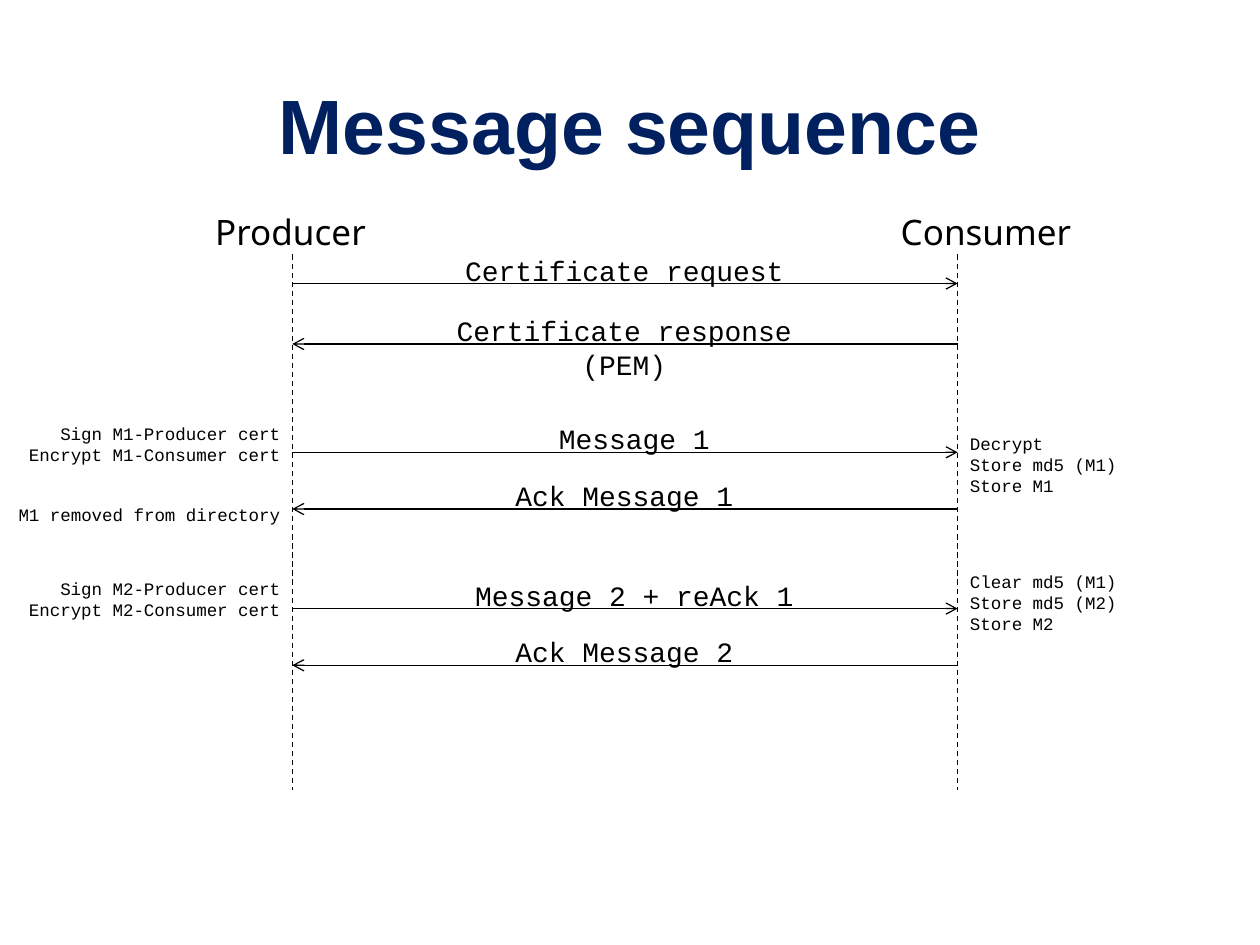
"""Build the message sequence slide between producer and consumer."""
from lxml.etree import SubElement
from pptx import Presentation
from pptx.dml.color import RGBColor
from pptx.enum.dml import MSO_LINE
from pptx.enum.shapes import MSO_CONNECTOR
from pptx.enum.text import MSO_ANCHOR, PP_ALIGN as Align
from pptx.oxml.ns import qn
from pptx.util import Inches, Pt

COLORS = {"title": "002060", "ink": "000000"}
MONO = "Courier New"
LEFT, RIGHT = 2.32, 7.6
TOP, END = 2.02, 6.27

ROLES = [("Producer", 1.61), ("Consumer", 7.05)]
STEPS = [
    ("Certificate request", 2.25, "send", 3.5, 0.37),
    ("Certificate response (PEM)", 2.73, "reply", 3.5, 0.64),
    ("Message 1", 3.59, "send", 3.58, 0.37),
    ("Ack Message 1", 4.04, "reply", 3.5, 0.37),
    ("Message 2 + reAck 1", 4.83, "send", 3.58, 0.37),
    ("Ack Message 2", 5.28, "reply", 3.5, 0.37),
]
NOTES = [
    ("right", 3.39, 0.61, ["Decrypt", "Store md5 (M1)", "Store M1"]),
    ("right", 4.48, 0.61, ["Clear md5 (M1)", "Store md5 (M2)", "Store M2"]),
    ("left", 3.31, 0.44, ["Sign M1-Producer cert", "Encrypt M1-Consumer cert"]),
    ("left", 4.54, 0.44, ["Sign M2-Producer cert", "Encrypt M2-Consumer cert"]),
    ("left", 3.95, 0.27, ["M1 removed from directory"]),
]


def style(frame, face, size, align, color="ink", bold=False):
    for para in frame.paragraphs:
        para.alignment = align
        for run in para.runs:
            font = run.font
            font.name, font.size, font.bold = face, Pt(size), bold
            font.color.rgb = RGBColor.from_string(COLORS[color])


def add_text(slide, box, lines, face, size, align):
    frame = slide.shapes.add_textbox(*map(Inches, box)).text_frame
    frame.word_wrap = True
    frame.text = "\n".join(lines)
    style(frame, face, size, align)


def add_line(slide, start, end, dash=False):
    link = slide.shapes.add_connector(
        MSO_CONNECTOR.STRAIGHT, *map(Inches, start + end))
    link.line.width = Pt(0.75)
    link.line.color.rgb = RGBColor.from_string(COLORS["ink"])
    if dash:
        link.line.dash_style = MSO_LINE.DASH
    else:
        SubElement(link.line._get_or_add_ln(), qn("a:tailEnd"), type="arrow")
    SubElement(link._element.spPr, qn("a:effectLst"))


def main():
    deck = Presentation()
    deck.slide_width, deck.slide_height = Inches(10), Inches(7.5)
    slide = deck.slides.add_slide(deck.slide_layouts[5])

    title = slide.shapes.title
    title.left, title.top = Inches(0), Inches(0.36)
    title.width, title.height = Inches(10), Inches(1.25)
    title.text_frame.text = "Message sequence"
    title.text_frame.vertical_anchor = MSO_ANCHOR.MIDDLE
    style(title.text_frame, "Arial", 44, Align.CENTER, "title", True)

    for x in (LEFT, RIGHT):
        add_line(slide, (x, TOP), (x, END), dash=True)
    for role, x in ROLES:
        add_text(slide, (x, 1.62, 1.57, 0.44), [role], "Noto Sans", 20, Align.LEFT)

    for label, y, way, x, height in STEPS:
        ends = [(LEFT, y), (RIGHT, y)]
        if way == "reply":
            ends.reverse()
        add_line(slide, *ends)
        add_text(slide, (x, y - 0.29, 2.91, height), [label], MONO, 16, Align.CENTER)

    sides = {"left": (0, LEFT, Align.RIGHT), "right": (RIGHT, 2.2, Align.LEFT)}
    for side, y, height, lines in NOTES:
        x, width, align = sides[side]
        add_text(slide, (x, y, width, height), lines, MONO, 10, align)

    deck.save("out.pptx")


if __name__ == "__main__":
    main()
